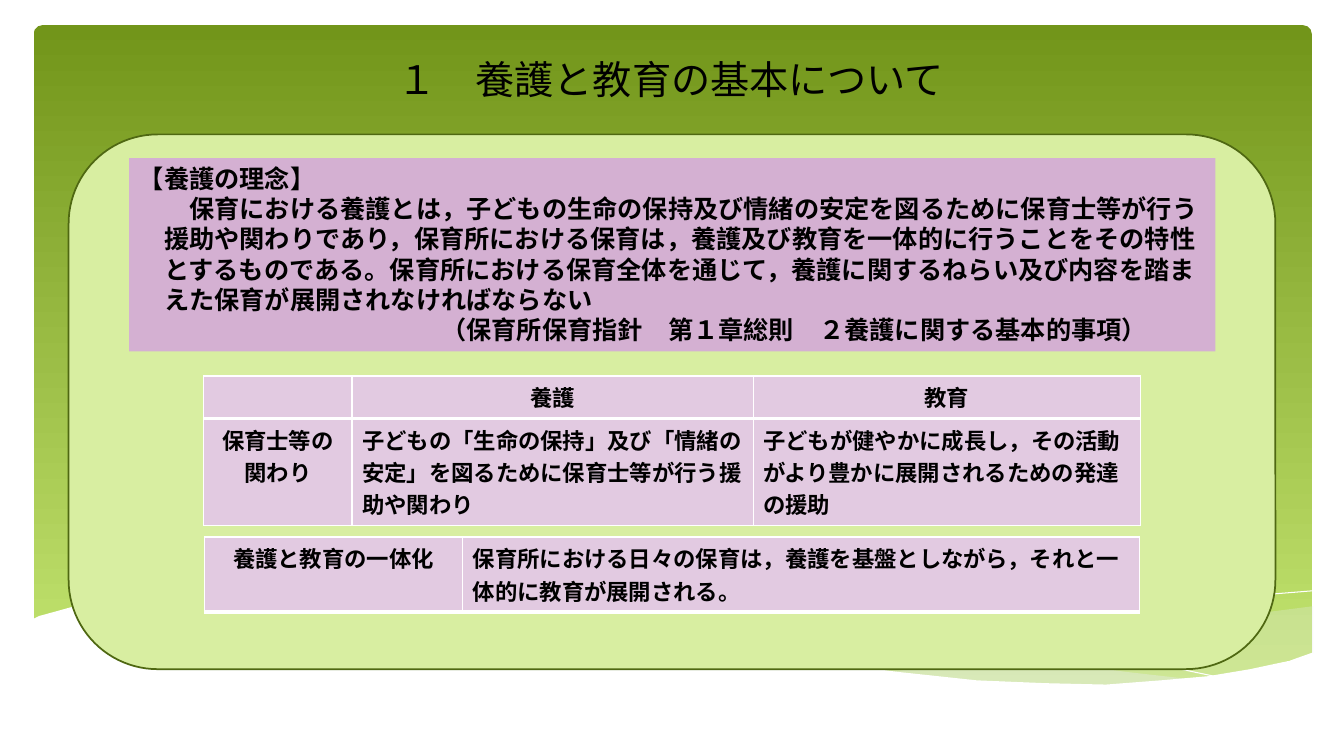
from lxml.etree import SubElement as Sub
from pptx import Presentation
from pptx.dml.color import RGBColor
from pptx.enum.shapes import MSO_SHAPE as Geo
from pptx.enum.text import MSO_ANCHOR as Anchor, MSO_AUTO_SIZE as Auto, PP_ALIGN as Align
from pptx.oxml.ns import qn
from pptx.util import Pt

FONT = "Noto Sans CJK JP"
COLORS = {
    "ink": "000000", "white": "FFFFFF", "top": "72951A", "low": "C5E672",
    "mist": "E7ECED", "panel": "D8EEA1", "edge": "4F6812",
    "quote": "D4B0D2", "cell": "E2CAE1",
}

TITLE = "１　養護と教育の基本について"
# text, left margin, first-line indent
QUOTE = [
    ("【養護の理念】", 0, 0),
    ("保育における養護とは，子どもの生命の保持及び情緒の安定を図るために保育士等が行う"
     "援助や関わりであり，保育所における保育は，養護及び教育を一体的に行うことをその特性"
     "とするものである。保育所における保育全体を通じて，養護に関するねらい及び内容を踏ま"
     "えた保育が展開されなければならない", 18, 18),
    ("（保育所保育指針　第１章総則　２養護に関する基本的事項）", 216, 0),
]
TABLES = [
    {"at": (145.5, 268.6), "cols": (106, 286.5, 276.5), "rows": (29.5, 74.3),
     "cells": [
         ("", "養護", "教育"),
         ("保育士等の関わり",
          "子どもの「生命の保持」及び「情緒の安定」を図るために保育士等が行う援助や関わり",
          "子どもが健やかに成長し，その活動がより豊かに展開されるための発達の援助"),
     ]},
    {"at": (146, 383.6), "cols": (184.5, 483.5), "rows": (50.4,),
     "cells": [
         ("養護と教育の一体化",
          "保育所における日々の保育は，養護を基盤としながら，それと一体的に教育が展開される。"),
     ]},
]
# fill, opacity in percent (no fill: an open white line), points
WAVES = [
    ("mist", 29, [
        (938, 433), (899, 438.5), (857, 445), (827, 450), (774, 460), (724, 468),
        (678, 474.5), (636, 480), (677.5, 484.5), (716, 487.5), (750, 489),
        (783, 489.5), (821, 488), (855, 485), (885, 480), (912, 474.5), (938, 467)]),
    ("mist", 40, [
        (275, 427), (348.5, 435), (432, 449), (509, 462), (578, 473), (639, 481),
        (694, 486.5), (743, 489), (786, 489.5), (824, 489), (858, 486), (805, 480),
        (745, 472), (678, 462), (605, 449), (547, 439), (495, 432), (424, 425.5),
        (347, 422.5)]),
    (None, 100, [
        (297, 430), (349, 425), (415, 424), (490, 427.5), (559, 433.5), (639, 443),
        (699, 452), (764, 463), (834.5, 476.5), (872, 484.5)]),
    (None, 100, [
        (590, 474.5), (646, 463), (718.5, 450), (803.5, 436), (860, 429),
        (901, 425), (937.5, 422.5)]),
    ("white", 100, [
        (22.3, 443), (27.5, 440.5), (39, 437), (57, 432.5), (81, 428.5), (114, 424),
        (169, 422), (220, 422.5), (281, 426), (350, 435), (429, 448), (508, 461.5),
        (579, 472), (641.5, 480), (698, 485.5), (747, 488), (790, 489), (829, 486.5),
        (863, 483), (893, 478), (921, 471.5), (938, 466.5), (938, 526.5), (22.3, 526.5)]),
]


def rgb(name):
    return RGBColor.from_string(COLORS[name])


def paint(fill, name):
    fill.solid()
    fill.fore_color.rgb = rgb(name)


def write(para, text, size, bold=True, align=Align.LEFT):
    para.alignment = align
    run = para.add_run()
    run.text = text
    look = {"name": FONT, "size": Pt(size), "bold": bold}
    for key, val in look.items():
        setattr(run.font, key, val)
    run.font.color.rgb = rgb("ink")
    Sub(run.font._element, qn("a:ea"), typeface=FONT)


def block(slide, geo, box, fill=None):
    shape = slide.shapes.add_shape(geo, *map(Pt, box))
    shape.shadow.inherit = False
    shape.line.fill.background()
    if fill:
        paint(shape.fill, fill)
    return shape


def wave(slide, fill, alpha, pts):
    pen = slide.shapes.build_freeform(*pts[0], scale=Pt(1))
    pen.add_line_segments(pts[1:], close=bool(fill))
    shape = pen.convert_to_shape()
    shape.shadow.inherit = False
    if not fill:
        shape.fill.background()
        shape.line.color.rgb = rgb("white")
        shape.line.width = Pt(0)
        return
    shape.line.fill.background()
    paint(shape.fill, fill)
    if alpha < 100:
        tint = shape.fill._xPr.find(".//" + qn("a:srgbClr"))
        Sub(tint, qn("a:alpha"), val=str(alpha * 1000))


def border(cell, base):
    """Draw white edges, with the bottom one base points wide."""
    props = cell._tc.get_or_add_tcPr()
    for spot, (side, wide) in enumerate({"L": 1, "R": 1, "T": 1, "B": base}.items()):
        line = props.makeelement(qn("a:ln" + side), {"w": str(Pt(wide))})
        props.insert(spot, line)
        Sub(Sub(line, qn("a:solidFill")), qn("a:srgbClr"), val=COLORS["white"])


def grid(slide, at, cols, rows, cells):
    size = sum(cols), sum(rows)
    table = slide.shapes.add_table(len(rows), len(cols), *map(Pt, at + size)).table
    for col, wide in zip(table.columns, cols):
        col.width = Pt(wide)
    for r, (high, texts) in enumerate(zip(rows, cells)):
        table.rows[r].height = Pt(high)
        for c, text in enumerate(texts):
            cell = table.cell(r, c)
            paint(cell.fill, "cell")
            border(cell, 3 if r == 0 else 1)
            head = c == 0 or len(rows) > 1 and r == 0
            write(cell.text_frame.paragraphs[0], text, 16,
                  align=Align.CENTER if head else Align.LEFT)


def main():
    prs = Presentation()
    prs.slide_width, prs.slide_height = Pt(960), Pt(540)
    slide = prs.slides.add_slide(prs.slide_layouts[5])

    back = block(slide, Geo.ROUNDED_RECTANGLE, (24, 18, 913, 475))
    back.adjustments[0] = 0.013
    back.fill.gradient()
    back.fill.gradient_angle = 270
    for stop, (pos, name) in zip(back.fill.gradient_stops, [(0, "top"), (1, "low")]):
        stop.position = pos
        stop.color.rgb = rgb(name)
    for item in WAVES:
        wave(slide, *item)

    panel = block(slide, Geo.ROUNDED_RECTANGLE, (49, 96, 862, 382), "panel")
    panel.line.color.rgb = rgb("edge")
    panel.line.width = Pt(1.25)
    for spec_of in TABLES:
        grid(slide, **spec_of)

    quote = block(slide, Geo.RECTANGLE, (92.2, 113, 776, 138), "quote").text_frame
    quote.word_wrap = True
    quote.vertical_anchor = Anchor.TOP
    for n, (text, left, first) in enumerate(QUOTE):
        para = quote.add_paragraph() if n else quote.paragraphs[0]
        write(para, text, 18)
        para.line_spacing = Pt(21.6)
        props = para._p.get_or_add_pPr()
        props.set("marL", str(Pt(left)))
        props.set("indent", str(Pt(first)))

    title = slide.shapes.title
    place = {"left": 70.5, "top": 26, "width": 817, "height": 50.4}
    for key, val in place.items():
        setattr(title, key, Pt(val))
    frame = title.text_frame
    look = {"word_wrap": True, "auto_size": Auto.NONE, "vertical_anchor": Anchor.BOTTOM}
    for key, val in look.items():
        setattr(frame, key, val)
    write(frame.paragraphs[0], TITLE, 28, False, Align.CENTER)
    slide.shapes._spTree.append(title._element)
    prs.save("out.pptx")


if __name__ == "__main__":
    main()
